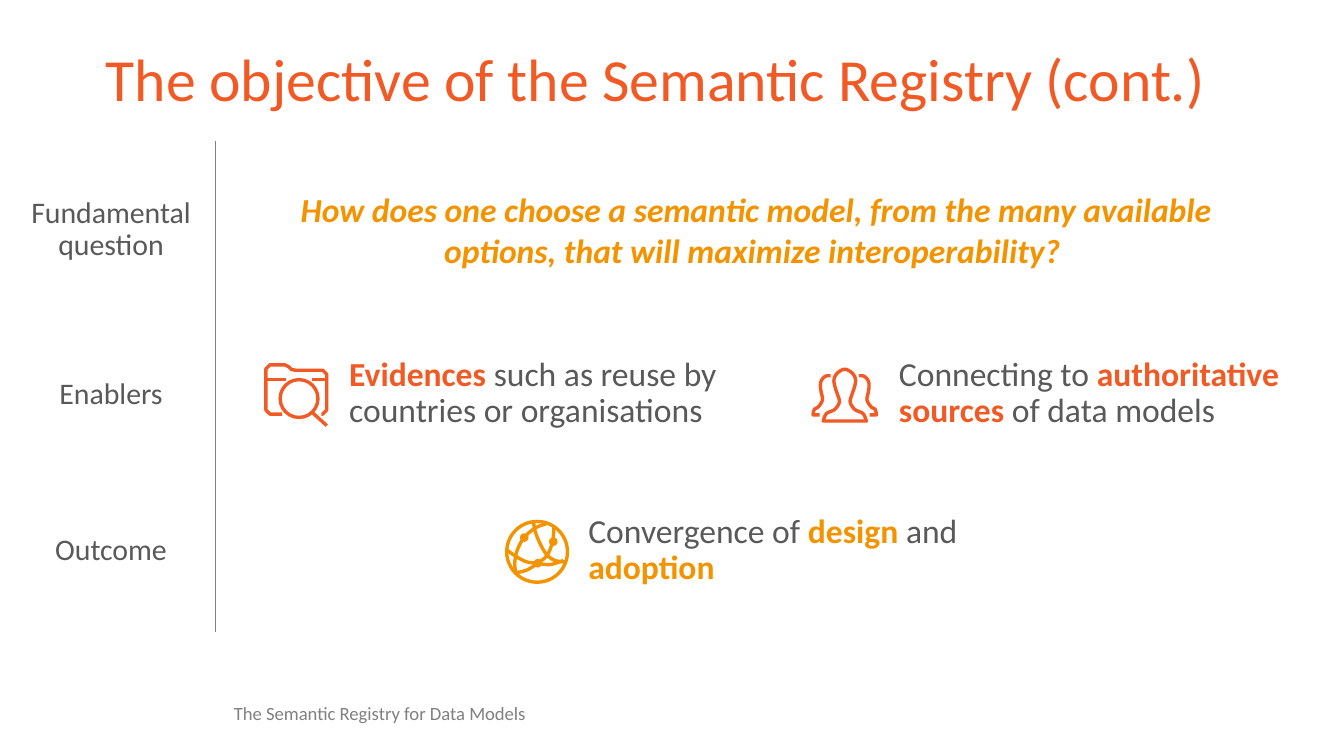
import pptx
import pptx.dml.color
import pptx.enum.shapes
import pptx.enum.text
import pptx.oxml
import pptx.util

Cm = pptx.util.Cm
Pt = pptx.util.Pt
Anchor = pptx.enum.text.MSO_ANCHOR
Align = pptx.enum.text.PP_ALIGN
Shape = pptx.enum.shapes.MSO_SHAPE

COLOURS = {"orange": "F15A24", "amber": "F39300", "text": "595959", "grey": "808080"}
ICON_GRID = 47  # icon drawings use a grid of 47 units
ICON_SIZE = 1.2  # centimetres


def colour(name):
    return pptx.dml.color.RGBColor.from_string(COLOURS[name])


def write_text(shape, runs, size=18, align=Align.LEFT, anchor=Anchor.MIDDLE,
               spacing=0.9, italic=False, margins=True):
    """Fill a shape with one paragraph of (text, colour name, bold) runs."""
    frame = shape.text_frame
    frame.word_wrap = True
    frame.vertical_anchor = anchor
    if not margins:
        frame.margin_left = frame.margin_right = 0
        frame.margin_top = frame.margin_bottom = 0
    para = frame.paragraphs[0]
    para.alignment = align
    para.line_spacing = spacing
    para.space_before = Pt(0)
    for text, colour_name, bold in runs:
        span = para.add_run()
        span.text = text
        span.font.name = "Calibri"
        span.font.size = Pt(size)
        span.font.bold = bold
        span.font.italic = italic
        span.font.color.rgb = colour(colour_name)


def smooth(points, steps=6):
    """Return points along a Catmull-Rom curve through the given points."""
    padded = [points[0], *points, points[-1]]
    curve = [points[0]]
    for a, b, c, d in zip(padded, padded[1:], padded[2:], padded[3:]):
        for step in range(1, steps + 1):
            t = step / steps
            curve.append(tuple(
                0.5 * (2 * q + (r - p) * t + (2 * p - 5 * q + 4 * r - s) * t ** 2
                       + (3 * q - p - 3 * r + s) * t ** 3)
                for p, q, r, s in zip(a, b, c, d)))
    return curve


def mirror(points, width=49):
    return [(width - x, y) for x, y in points]


class SlideBuilder:
    def __init__(self, page, icon_line=1.8):
        self.page = page
        self.icon_line = icon_line
        self.unit = Cm(ICON_SIZE) / ICON_GRID

    def text(self, left, top, width, height, runs, **style):
        box = self.page.shapes.add_textbox(Cm(left), Cm(top), Cm(width), Cm(height))
        write_text(box, runs, **style)

    def panel(self, left, top, width, height, runs, **style):
        box = self.page.shapes.add_shape(
            Shape.ROUNDED_RECTANGLE, Cm(left), Cm(top), Cm(width), Cm(height))
        box.shadow.inherit = False
        box.fill.background()
        box.line.fill.background()
        write_text(box, runs, **style)

    def rule(self, x, top, bottom, colour_name):
        line = self.page.shapes.add_connector(
            pptx.enum.shapes.MSO_CONNECTOR.STRAIGHT, Cm(x), Cm(top), Cm(x), Cm(bottom))
        line.line.color.rgb = colour(colour_name)
        line.line.width = Pt(0.5)
        line._element.spPr.append(pptx.oxml.parse_xml(
            '<a:effectLst xmlns:a="http://schemas.openxmlformats.org/drawingml/2006/main"/>'))

    def strokes(self, origin, paths, colour_name, close=False):
        """Draw paths of grid points as one outlined freeform."""
        left, top = (Cm(value) for value in origin)
        builder = None
        for path in paths:
            placed = [(left + x * self.unit, top + y * self.unit) for x, y in path]
            if builder is None:
                builder = self.page.shapes.build_freeform(*placed[0])
            else:
                builder.move_to(*placed[0])
            builder.add_line_segments(placed[1:], close=close)
        self.outline(builder.convert_to_shape(), colour_name)

    def circle(self, origin, centre, radius, colour_name, filled=False):
        left, top = (Cm(value) + int((mid - radius) * self.unit)
                     for value, mid in zip(origin, centre))
        size = int(2 * radius * self.unit)
        disc = self.page.shapes.add_shape(Shape.OVAL, left, top, size, size)
        self.outline(disc, colour_name)
        if filled:
            disc.fill.solid()
            disc.fill.fore_color.rgb = colour(colour_name)
            disc.line.fill.background()

    def outline(self, shape, colour_name):
        shape.shadow.inherit = False
        shape.fill.background()
        shape.line.color.rgb = colour(colour_name)
        shape.line.width = Pt(self.icon_line)

    def folder_icon(self, origin, colour_name):
        folder = [(13, 37.5), (4, 37.5), (1, 34.5), (1, 4), (4, 1), (15, 1), (18, 2.5),
                  (20, 4.5), (23, 5), (43, 5), (46, 8), (46, 34.5), (43, 37.5), (42, 37.5)]
        dividers = [[(1, 12), (16, 12)], [(35, 12), (46, 12)]]
        handle = [(35, 36), (46, 46)]
        self.strokes(origin, [folder, *dividers, handle], colour_name)
        self.circle(origin, (25.5, 26), 14, colour_name)

    def people_icon(self, origin, colour_name):
        half = [(8.5, 39.5), (11, 34), (17, 31), (20.5, 25.5), (19, 19.5),
                (17.5, 15), (16.5, 9), (19, 4), (24.5, 1.2)]
        side = smooth([(14, 6), (10, 6.5), (7, 10), (6.5, 14), (7, 18), (8, 24),
                       (5, 29), (2, 31), (1, 35)]) + [(6, 35)]
        self.strokes(origin, [smooth(half + mirror(half)[-2::-1])], colour_name, close=True)
        self.strokes(origin, [side, mirror(side)], colour_name)

    def globe_icon(self, origin, colour_name):
        arcs = [
            [(31, 2.5), (22, 6), (14, 13), (9, 22), (7, 32), (8, 39)],
            [(21, 2), (22, 8), (26, 18), (31, 26), (37, 30), (44, 31)],
            [(1, 22), (8, 27), (16, 31), (24, 32), (33, 33), (43, 30)],
            [(8, 39), (16, 37), (24, 32), (31, 26), (35, 16), (36, 5)],
        ]
        self.strokes(origin, [smooth(arc) for arc in arcs], colour_name)
        self.circle(origin, (23.5, 23.5), 22.5, colour_name)
        for centre in [(14, 13), (35.5, 16), (24, 32)]:
            self.circle(origin, centre, 3.2, colour_name, filled=True)


def main():
    deck = pptx.Presentation()
    deck.slide_width, deck.slide_height = Cm(25.4), Cm(14.29)
    slide = SlideBuilder(deck.slides.add_slide(deck.slide_layouts[6]))

    # Title and footer
    slide.text(1.75, 0.76, 21.9, 1.6,
               [("The objective of the Semantic Registry (cont.)", "orange", False)], size=32)
    slide.text(4.42, 13.23, 7.7, 0.46,
               [("The Semantic Registry for Data Models", "grey", False)],
               size=10, anchor=Anchor.BOTTOM, margins=False)

    # Row labels and divider
    for label, top, height in [("Fundamental question", 3.68, 1.32),
                               ("Enablers", 7.04, 0.86), ("Outcome", 9.98, 0.86)]:
        slide.text(0, top, 4.2, height, [(label, "text", False)],
                   size=16, align=Align.CENTER)
    slide.rule(4.08, 2.67, 11.94, "grey")

    # Fundamental question
    slide.panel(4.67, 3.35, 19.25, 1.98,
                [("How does one choose a semantic model, from the many available options, "
                  "that will maximize interoperability? ", "amber", True)],
                align=Align.CENTER, spacing=1.0, italic=True)

    # Enablers and outcome: icon with statement
    statements = [
        (slide.folder_icon, (5, 6.87), "orange", (6.35, 6.63, 7.7),
         [("Evidences ", "orange", True),
          ("such as reuse by countries or organisations", "text", False)]),
        (slide.people_icon, (15.34, 6.95), "orange", (16.74, 6.63, 7.98),
         [("Connecting to ", "text", False), ("authoritative sources ", "orange", True),
          ("of data models", "text", False)]),
        (slide.globe_icon, (9.55, 9.83), "amber", (10.87, 9.6, 7.7),
         [("Convergence of ", "text", False), ("design ", "amber", True),
          ("and", "text", False), (" adoption", "amber", True)]),
    ]
    for draw_icon, origin, colour_name, place, runs in statements:
        draw_icon(origin, colour_name)
        slide.text(*place, 1.65, runs, anchor=Anchor.TOP)

    deck.save("out.pptx")


if __name__ == "__main__":
    main()
